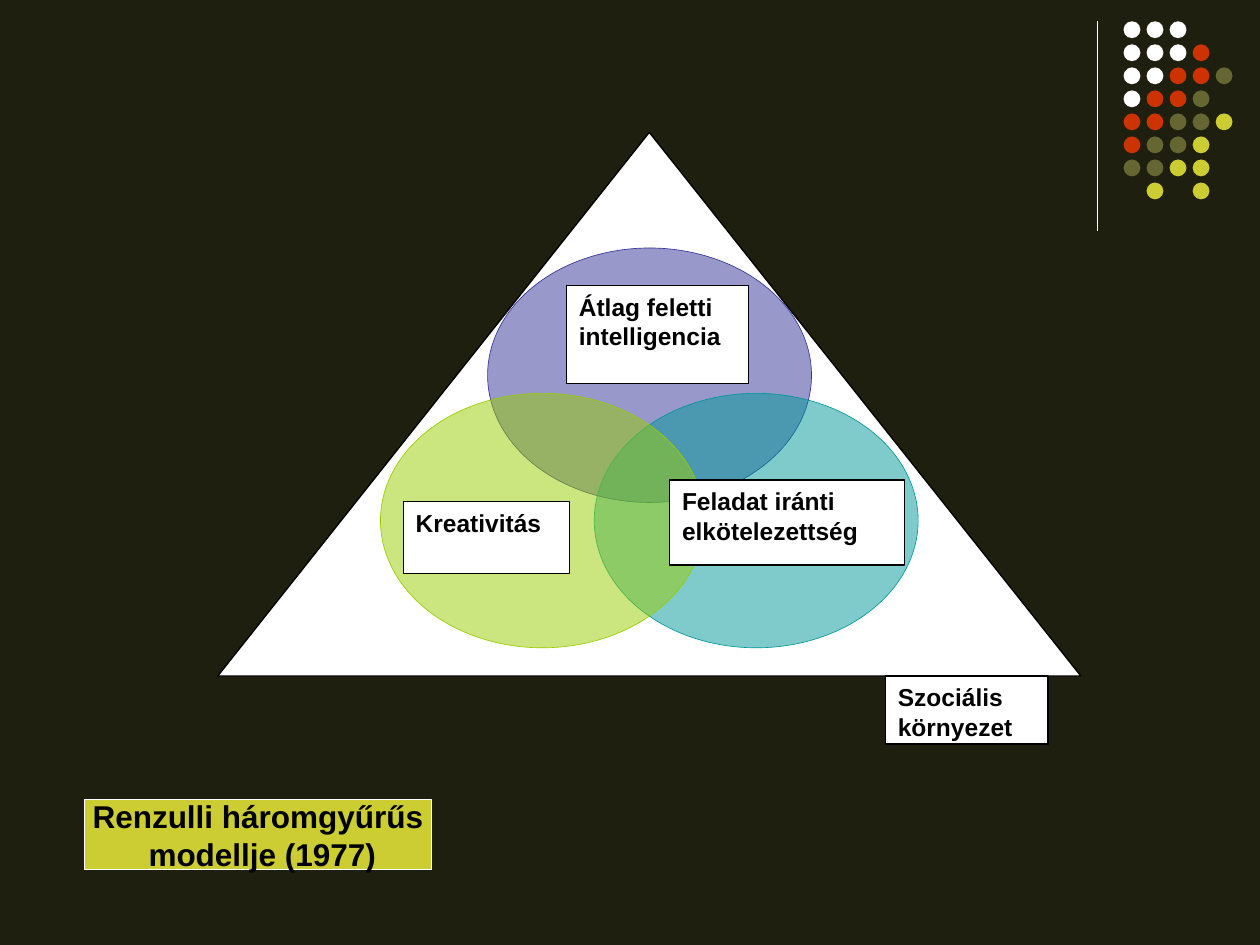
from lxml.etree import SubElement
from pptx import Presentation
from pptx.dml.color import RGBColor
from pptx.enum.shapes import MSO_CONNECTOR, MSO_SHAPE
from pptx.enum.text import MSO_ANCHOR, MSO_AUTO_SIZE, PP_ALIGN
from pptx.oxml.ns import qn
from pptx.util import Cm, Pt

HUES = {
    "back": "1F1F0F", "white": "FFFFFF", "black": "000000",
    "red": "CC3300", "olive": "666633", "lime": "CCCC33",
    "blue": "333399", "teal": "009999", "green": "99CC00",
}
RGB = {name: RGBColor.from_string(code) for name, code in HUES.items()}


def write(shape, text, size=14, align=PP_ALIGN.LEFT, anchor=MSO_ANCHOR.TOP, pad=0.25):
    frame = shape.text_frame
    frame.text = text
    frame.auto_size = MSO_AUTO_SIZE.NONE
    frame.word_wrap = True
    frame.vertical_anchor = anchor
    frame.margin_left = frame.margin_right = Cm(pad)
    for para in frame.paragraphs:
        para.alignment = align
        font = para.font
        font.name, font.size, font.bold = "Arial", Pt(size), True
        font.color.rgb = RGB["black"]


def draw(kind, place, fill, line=None, width=0.75):
    shape = slide.shapes.add_shape(kind, *map(Cm, place))
    shape.shadow.inherit = False
    shape.fill.solid()
    shape.fill.fore_color.rgb = RGB[fill]
    if line:
        shape.line.color.rgb = RGB[line]
        shape.line.width = Pt(width)
    else:
        shape.line.fill.background()
    return shape


# Slide with plain dark background
deck = Presentation()
deck.slide_width, deck.slide_height = Cm(25.4), Cm(19.05)
slide = deck.slides.add_slide(deck.slide_layouts[5])
slide.background.fill.solid()
slide.background.fill.fore_color.rgb = RGB["back"]

# Corner rule
rule = slide.shapes.add_connector(
    MSO_CONNECTOR.STRAIGHT, Cm(22.12), Cm(0.43), Cm(22.12), Cm(4.65))
rule.line.color.rgb = RGB["white"]
rule.line.width = Pt(0.75)
SubElement(rule._element.spPr, qn("a:effectLst"))

# Corner dots, one letter per dot
KEY = {"w": "white", "r": "red", "o": "olive", "l": "lime"}
ROWS = ["www", "wwwr", "wwrro", "wrro", "rrool", "rool", "ooll", " l l"]
step = 3.25 / 7
for row, marks in enumerate(ROWS):
    for col, mark in enumerate(marks):
        if mark in KEY:
            place = (22.65 + col * step, 0.43 + row * step, 0.34, 0.34)
            draw(MSO_SHAPE.OVAL, place, KEY[mark])

# Triangle of the social setting
draw(MSO_SHAPE.ISOSCELES_TRIANGLE, (4.39, 2.67, 17.4, 10.96), "white", "black")

# Three half-clear rings
for left, top, hue in [(9.83, 5, "blue"), (11.98, 7.93, "teal"), (7.67, 7.93, "green")]:
    ring = draw(MSO_SHAPE.OVAL, (left, top, 6.53, 5.13), hue, hue, 0.37)
    tint = ring.fill._xPr.find(qn("a:solidFill"))[0]
    SubElement(tint, qn("a:alpha"), val="50000")

# Labels
LABELS = [
    ("Kreativitás", (8.13, 10.11, 3.35, 1.46)),
    ("Feladat iránti elkötelezettség", (13.5, 9.68, 4.74, 1.71)),
    ("Átlag feletti intelligencia", (11.42, 5.76, 3.67, 1.97)),
    ("Szociális környezet", (17.85, 13.63, 3.28, 1.37)),
]
for text, place in LABELS:
    write(draw(MSO_SHAPE.RECTANGLE, place, "white", "black"), text)

# Title, with no side margins so that each line fits the box
title = slide.shapes.title
title.left, title.top, title.width, title.height = map(Cm, (1.7, 16.12, 7, 1.41))
title.fill.solid()
title.fill.fore_color.rgb = RGB["lime"]
title.line.color.rgb = RGB["white"]
title.line.width = Pt(0.75)
write(title, "Renzulli háromgyűrűs\n modellje (1977)", size=18,
      align=PP_ALIGN.CENTER, anchor=MSO_ANCHOR.MIDDLE, pad=0)

deck.save("out.pptx")
